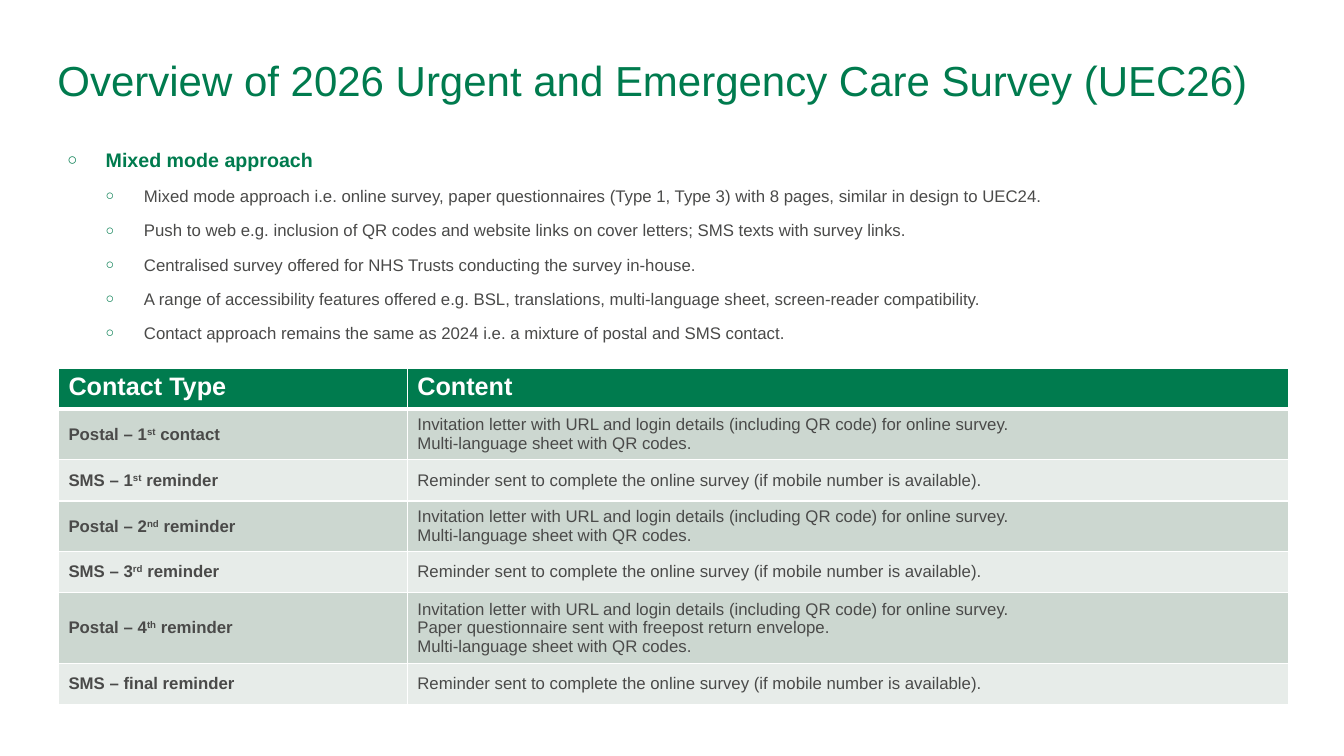
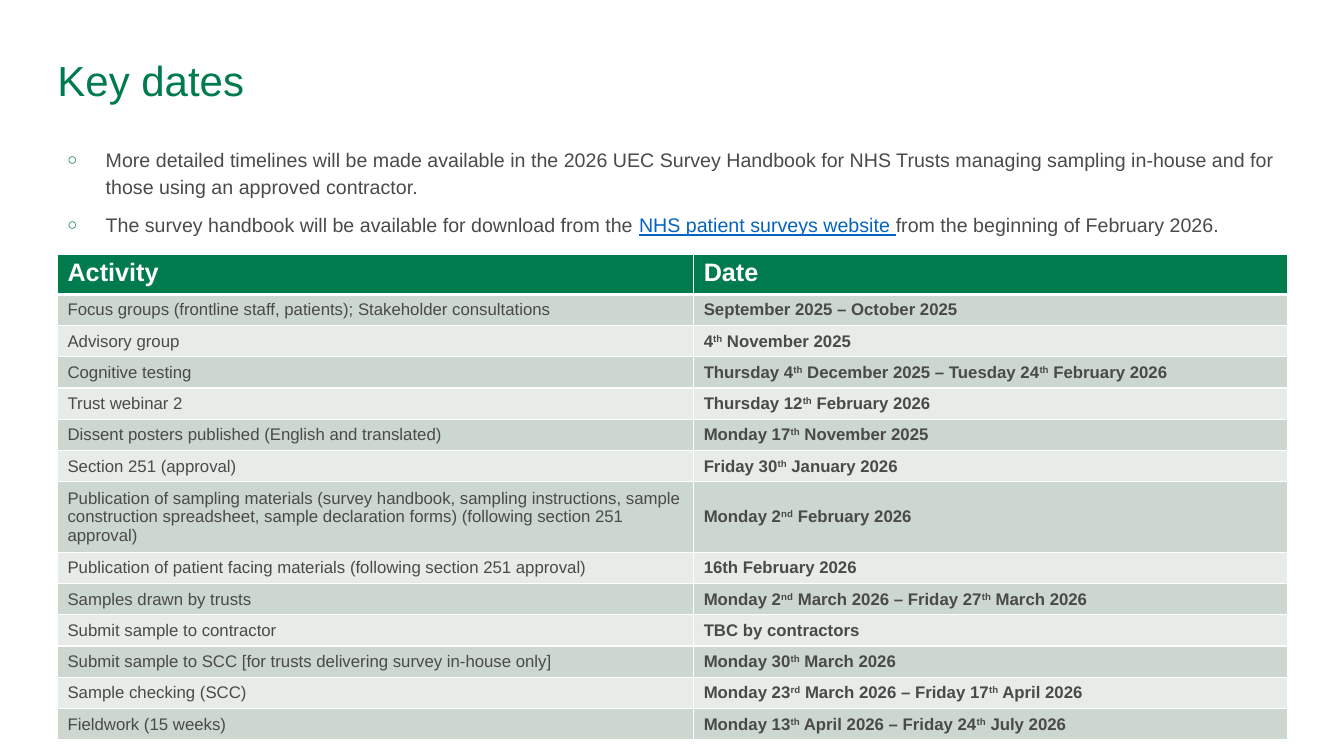
import pptx
import pptx.dml.color
import pptx.enum.text
import pptx.oxml
import pptx.oxml.ns
import pptx.util
from pptx.util import Inches

# Shared look
FONT = "Arial"
GREEN, GREY, WHITE, LINK = "007B4E", "4A4A49", "FFFFFF", "0563C1"
BANDS = ["CCD7D0", "E7ECE9"]
LEFT, WIDTH = 0.57, 12.2
INDENT = 0.38
BULLET_SIZES = [14, 12]

# Content: ^text^ is superscript, _text_ is link text
INVITATION = "Invitation letter with URL and login details (including QR code) for online survey."
LANGUAGES = "Multi-language sheet with QR codes."
REMINDER = "Reminder sent to complete the online survey (if mobile number is available)."

SLIDES = [
    {
        "title": "Overview of 2026 Urgent and Emergency Care Survey (UEC26)",
        # level, text, format
        "bullets": [
            (0, "Mixed mode approach", {"bold": True, "color": GREEN}),
            (1, "Mixed mode approach i.e. online survey, paper questionnaires (Type 1, Type 3) "
                "with 8 pages, similar in design to UEC24.", {}),
            (1, "Push to web e.g. inclusion of QR codes and website links on cover letters; "
                "SMS texts with survey links.", {}),
            (1, "Centralised survey offered for NHS Trusts conducting the survey in-house.", {}),
            (1, "A range of accessibility features offered e.g. BSL, translations, "
                "multi-language sheet, screen-reader compatibility.", {}),
            (1, "Contact approach remains the same as 2024 i.e. a mixture of postal and SMS contact.", {}),
        ],
        "table": {
            "left": 0.58, "top": 3.65, "columns": [3.46, 8.74], "bold_column": 0,
            "header_height": 0.41, "row_height": 0.41, "tall_rows": {},
            "rows": [
                ("Contact Type", "Content"),
                ("Postal – 1^st^ contact", [INVITATION, LANGUAGES]),
                ("SMS – 1^st^ reminder", REMINDER),
                ("Postal – 2^nd^ reminder", [INVITATION, LANGUAGES]),
                ("SMS – 3^rd^ reminder", REMINDER),
                ("Postal – 4^th^ reminder",
                 [INVITATION, "Paper questionnaire sent with freepost return envelope.", LANGUAGES]),
                ("SMS – final reminder", REMINDER),
            ],
        },
    },
    {
        "title": "Key dates",
        "bullets": [
            (0, "More detailed timelines will be made available in the 2026 UEC Survey Handbook for "
                "NHS Trusts managing sampling in-house and for those using an approved contractor.", {}),
            (0, "The survey handbook will be available for download from the "
                "_NHS patient surveys website _from the beginning of February 2026.", {}),
        ],
        "table": {
            "left": LEFT, "top": 2.52, "columns": [6.31, 5.89], "bold_column": 1,
            "header_height": 0.36, "row_height": 0.31, "tall_rows": {7: 0.63},
            "rows": [
                ("Activity", "Date"),
                ("Focus groups (frontline staff, patients); Stakeholder consultations",
                 "September 2025 – October 2025"),
                ("Advisory group", "4^th^ November 2025"),
                ("Cognitive testing", "Thursday 4^th^ December 2025 – Tuesday 24^th^ February 2026"),
                ("Trust webinar 2", "Thursday 12^th^ February 2026"),
                ("Dissent posters published (English and translated)", "Monday 17^th^ November 2025"),
                ("Section 251 (approval)", "Friday 30^th^ January 2026"),
                ("Publication of sampling materials (survey handbook, sampling instructions, sample "
                 "construction spreadsheet, sample declaration forms) (following section 251 approval)",
                 "Monday 2^nd^ February 2026"),
                ("Publication of patient facing materials (following section 251 approval)",
                 "16th February 2026"),
                ("Samples drawn by trusts", "Monday 2^nd^ March 2026 – Friday 27^th^ March 2026"),
                ("Submit sample to contractor", "TBC by contractors"),
                ("Submit sample to SCC [for trusts delivering survey in-house only]",
                 "Monday 30^th^ March 2026"),
                ("Sample checking (SCC)", "Monday 23^rd^ March 2026 – Friday 17^th^ April 2026"),
                ("Fieldwork (15 weeks)", "Monday 13^th^ April 2026 – Friday 24^th^ July 2026"),
            ],
        },
    },
]


def rgb(value):
    return pptx.dml.color.RGBColor.from_string(value)


def add_xml(parent, markup):
    """Append one element written with the a: prefix."""
    tag, rest = markup.split(" ", 1)
    parent.append(pptx.oxml.parse_xml(f"<{tag} {pptx.oxml.ns.nsdecls('a')} {rest}"))


def add_span(para, text, size, color=GREY, **formats):
    span = para.add_run()
    span.text = text
    span.font.color.rgb = rgb(color)
    for name, value in {"name": FONT, "size": pptx.util.Pt(size), **formats}.items():
        setattr(span.font, name, value)
    return span


def add_text(para, text, size, **formats):
    """Write text, with every second piece between marks set apart."""
    for link_index, piece in enumerate(text.split("_")):
        link = {"color": LINK, "underline": True} if link_index % 2 else {}
        for index, part in enumerate(piece.split("^")):
            if part:
                span = add_span(para, part, size, **{**formats, **link})
                if index % 2:
                    span.font._element.set("baseline", "30000")


def add_box(page, left, top, width, height, margin=None):
    frame = page.shapes.add_textbox(*map(Inches, (left, top, width, height))).text_frame
    frame.word_wrap = True
    if margin is not None:
        for side in ("left", "top", "right", "bottom"):
            setattr(frame, f"margin_{side}", Inches(margin))
    return frame


def add_bullets(page, bullets):
    frame = add_box(page, LEFT, 1.39, WIDTH, 1.28)
    for index, (level, text, formats) in enumerate(bullets):
        para = frame.add_paragraph() if index else frame.paragraphs[0]
        para.level = level
        properties = para._p.get_or_add_pPr()
        properties.set("marL", str(Inches(INDENT * (level + 1))))
        properties.set("indent", str(-Inches(INDENT)))
        add_xml(properties, f'a:buClr ><a:srgbClr val="{GREEN}"/></a:buClr>')
        add_xml(properties, 'a:buSzPct val="85000"/>')
        add_xml(properties, f'a:buFont typeface="{FONT}"/>')
        add_xml(properties, 'a:buChar char="○"/>')
        para.line_spacing = 1.14
        if index:
            para.space_before = pptx.util.Pt(8)
        add_text(para, text, BULLET_SIZES[level], **formats)


def set_borders(cell, row_index):
    """White rules, with a heavier one under the header."""
    widths = {"L": 1, "R": 1, "T": 3 if row_index == 1 else 1, "B": 3 if row_index == 0 else 1}
    for side, points in widths.items():
        add_xml(cell._tc.get_or_add_tcPr(),
                f'a:ln{side} w="{pptx.util.Pt(points)}"><a:solidFill><a:srgbClr val="{WHITE}"/>'
                f'</a:solidFill></a:ln{side}>')


def add_table(page, spec_table):
    rows, columns = spec_table["rows"], spec_table["columns"]
    heights = [spec_table["tall_rows"].get(index, spec_table["row_height"]) for index in range(len(rows))]
    heights[0] = spec_table["header_height"]
    table = page.shapes.add_table(
        len(rows), len(columns), Inches(spec_table["left"]), Inches(spec_table["top"]),
        Inches(sum(columns)), Inches(sum(heights))).table
    table.horz_banding = False
    for column, width in zip(table.columns, columns):
        column.width = Inches(width)
    for row_index, (row, height) in enumerate(zip(rows, heights)):
        table.rows[row_index].height = Inches(height)
        header = row_index == 0
        for column_index, content in enumerate(row):
            cell = table.cell(row_index, column_index)
            set_borders(cell, row_index)
            cell.fill.solid()
            cell.fill.fore_color.rgb = rgb(GREEN if header else BANDS[(row_index - 1) % 2])
            if not header:
                cell.vertical_anchor = pptx.enum.text.MSO_ANCHOR.MIDDLE
            lines = [content] if isinstance(content, str) else content
            for index, line in enumerate(lines):
                frame = cell.text_frame
                para = frame.add_paragraph() if index else frame.paragraphs[0]
                add_text(para, line, 18 if header else 12, color=WHITE if header else GREY,
                         bold=header or column_index == spec_table["bold_column"])


def main():
    deck = pptx.Presentation()
    deck.slide_width, deck.slide_height = Inches(13.33), Inches(7.5)
    for content in SLIDES:
        page = deck.slides.add_slide(deck.slide_layouts[6])
        title = add_box(page, LEFT, 0.54, WIDTH, 0.5, margin=0)
        add_text(title.paragraphs[0], content["title"], 30, color=GREEN)
        add_bullets(page, content["bullets"])
        add_table(page, content["table"])
    deck.save("out.pptx")


if __name__ == "__main__":
    main()
